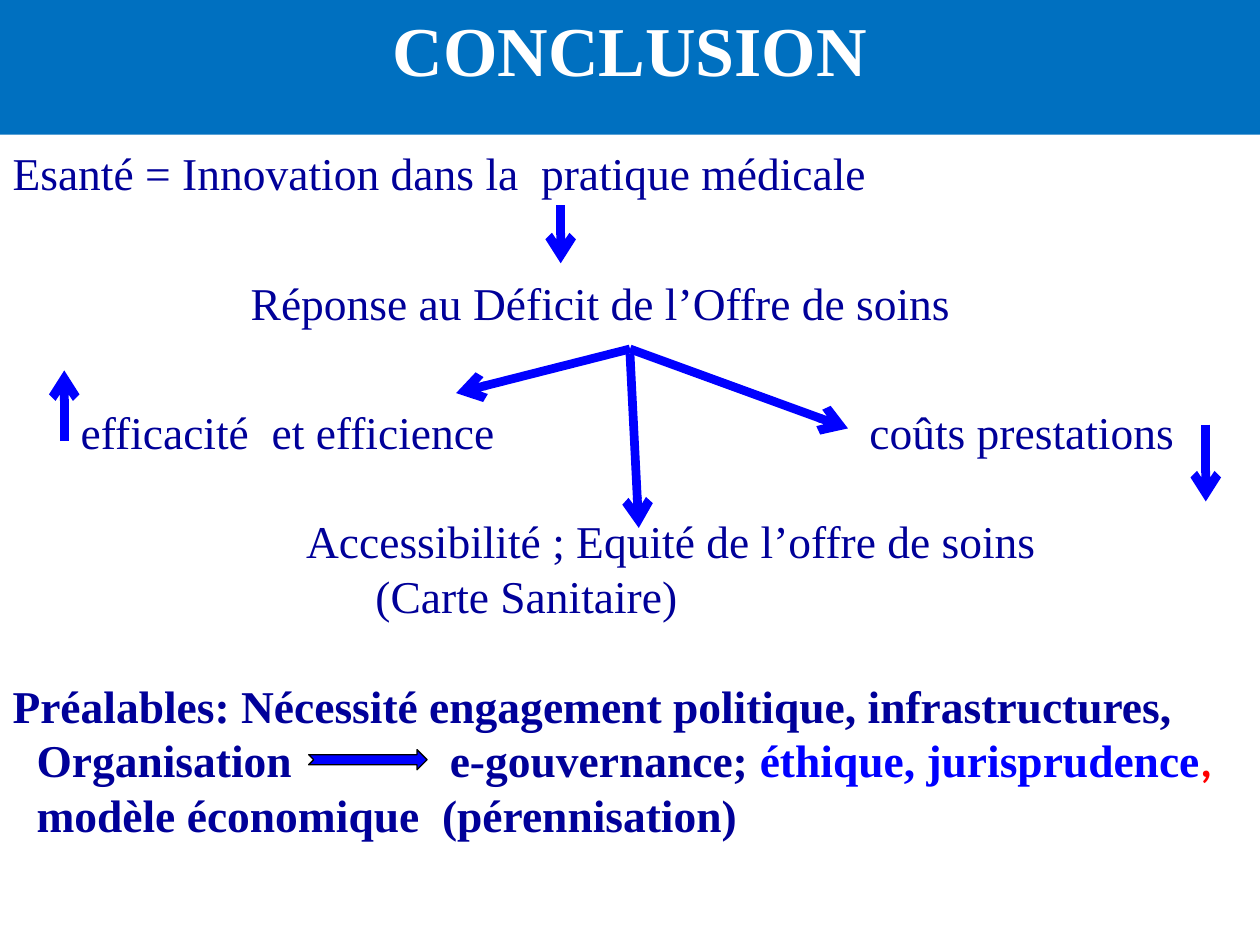
import pptx
import pptx.dml.color
import pptx.enum.shapes
import pptx.enum.text
import pptx.oxml.ns
import pptx.util
from lxml import etree
from pptx.util import Inches

SERIF = "Times New Roman"
NAVY, BLUE, RED, WHITE = "000099", "0000FF", "FF0000", "FFFFFF"
SHAPES = pptx.enum.shapes.MSO_SHAPE
LINE_PITCH = 31.1
PREREQUISITES_TOP = 5.38

STATEMENTS = [
    ("Esanté = Innovation dans la  pratique médicale", 0.1, 1.15, 7.5),
    ("Réponse au Déficit de l’Offre de soins", 1.99, 2.18, 6.2),
    ("efficacité  et efficience", 0.64, 3.21, 3.8),
    ("coûts prestations", 6.9, 3.21, 2.6),
    ("Accessibilité ; Equité de l’offre de soins", 2.43, 4.07, 6.4),
    ("(Carte Sanitaire)", 2.98, 4.51, 3),
]
ARROWS = [
    (0.51, 3.5, 0.51, 2.94),
    (9.57, 3.37, 9.57, 3.98),
    (4.45, 1.63, 4.45, 2.09),
    (5, 2.77, 3.62, 3.12),
    (5, 2.81, 5.07, 4.19),
    (5, 2.77, 6.73, 3.4),
]
PREREQUISITES = [
    (0, 0.1, 9.8, [("Préalables: Nécessité engagement politique, infrastructures,", NAVY, SERIF)]),
    (1, 0.29, 2.1, [("Organisation", NAVY, SERIF)]),
    (1, 3.57, 6.4, [("e-gouvernance; ", NAVY, SERIF),
                    ("éthique, jurisprudence", BLUE, SERIF),
                    (",", RED, "Calibri")]),
    (2, 0.29, 7, [("modèle économique  (pérennisation)", NAVY, SERIF)]),
]


def rgb(color):
    return pptx.dml.color.RGBColor.from_string(color)


def add_span(para, text, color, size=26, bold=False, font=SERIF):
    span = para.add_run()
    span.text = text
    span.font.name = font
    span.font.size = pptx.util.Pt(size)
    span.font.bold = bold
    span.font.color.rgb = rgb(color)


def set_frame(shape, top_margin=0):
    frame = shape.text_frame
    frame.word_wrap = True
    frame.vertical_anchor = pptx.enum.text.MSO_ANCHOR.TOP
    frame.margin_left = frame.margin_right = frame.margin_bottom = 0
    frame.margin_top = Inches(top_margin)
    return frame.paragraphs[0]


def add_text(page, left, top, width, height=0.42):
    box = page.shapes.add_textbox(Inches(left), Inches(top), Inches(width), Inches(height))
    return set_frame(box)


def add_block(page, kind, left, top, width, height, fill):
    block = page.shapes.add_shape(
        kind, Inches(left), Inches(top), Inches(width), Inches(height))
    block.shadow.inherit = False
    block.fill.solid()
    block.fill.fore_color.rgb = rgb(fill)
    block.line.fill.background()
    return block


def add_title(page, text):
    banner = add_block(page, SHAPES.RECTANGLE, 0, 0, 10, 1.07, "0070C0")
    para = set_frame(banner, 0.05)
    para.alignment = pptx.enum.text.PP_ALIGN.CENTER
    add_span(para, text, WHITE, 40, True)


def add_arrow(page, x1, y1, x2, y2):
    arrow = page.shapes.add_connector(
        pptx.enum.shapes.MSO_CONNECTOR.STRAIGHT,
        Inches(x1), Inches(y1), Inches(x2), Inches(y2))
    arrow.line.color.rgb = rgb(BLUE)
    arrow.line.width = pptx.util.Pt(5)
    qn = pptx.oxml.ns.qn
    etree.SubElement(arrow.line._get_or_add_ln(), qn("a:tailEnd"), type="arrow")
    etree.SubElement(arrow._element.spPr, qn("a:effectLst"))


def add_prerequisite(page, row, left, width, spans):
    para = add_text(page, left, PREREQUISITES_TOP + row * LINE_PITCH / 72, width)
    para.line_spacing = pptx.util.Pt(LINE_PITCH)
    for text, color, font in spans:
        add_span(para, text, color, bold=True, font=font)


def main():
    deck = pptx.Presentation()
    deck.slide_width, deck.slide_height = Inches(10), Inches(7.5)
    page = deck.slides.add_slide(deck.slide_layouts[6])
    add_title(page, "CONCLUSION")
    for text, left, top, width in STATEMENTS:
        add_span(add_text(page, left, top, width), text, NAVY)
    for prerequisite in PREREQUISITES:
        add_prerequisite(page, *prerequisite)
    for ends in ARROWS:
        add_arrow(page, *ends)
    pointer = add_block(page, SHAPES.NOTCHED_RIGHT_ARROW, 2.45, 5.95, 0.94, 0.16, BLUE)
    pointer.line.color.rgb = rgb("000000")
    pointer.line.width = pptx.util.Pt(0.75)
    deck.save("out.pptx")


if __name__ == "__main__":
    main()
